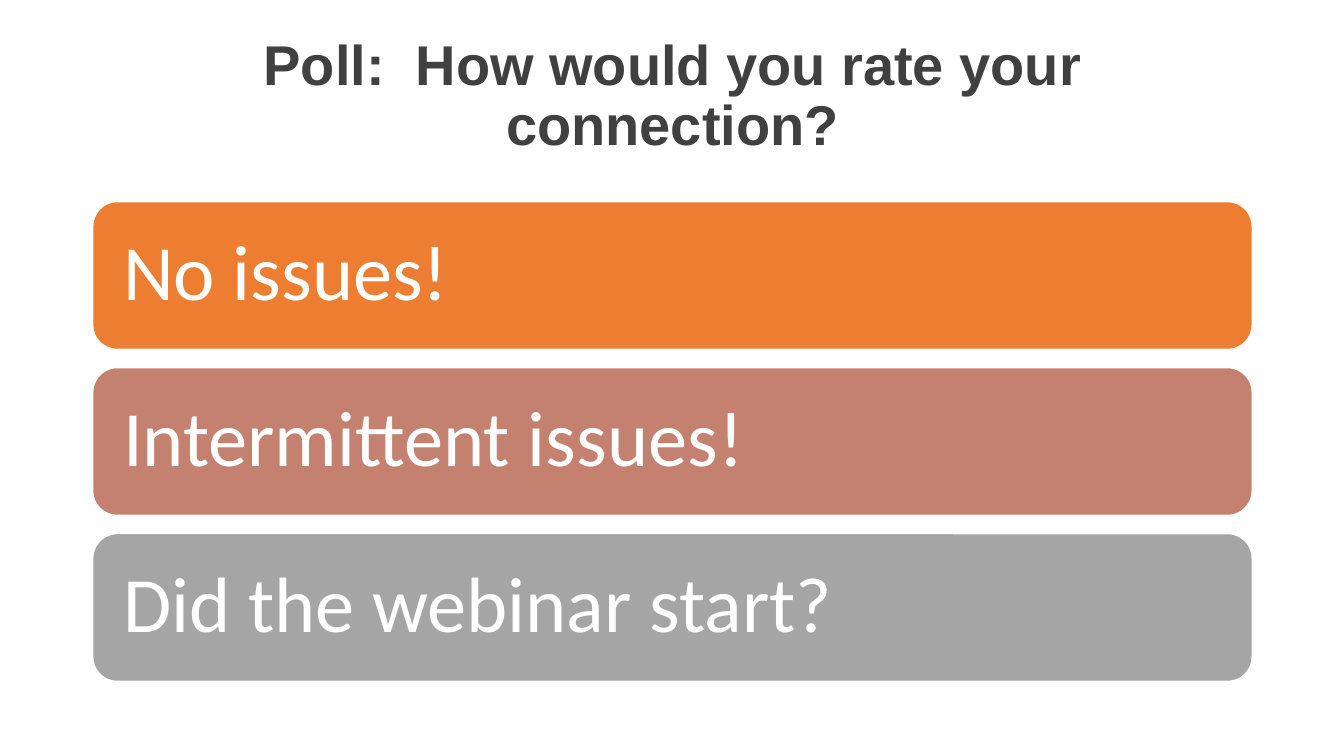
from pptx import Presentation
from pptx import util as u
from pptx.dml.color import RGBColor
from pptx.enum import shapes, text

SLIDE_WIDTH, SLIDE_HEIGHT = 13.33, 7.5
MARGIN = 0.92
CONTENT_WIDTH = 11.5
WHITE = "FFFFFF"
ANSWERS = [
    ("No issues!", "ED7D31"),
    ("Intermittent issues!", "C48170"),
    ("Did the webinar start?", "A5A5A5"),
]


def set_color(color_format, hex_color):
    color_format.rgb = RGBColor.from_string(hex_color)


def write_text(shape, wording, size, font_name, hex_color, align, bold=False):
    frame = shape.text_frame
    frame.word_wrap = True
    frame.vertical_anchor = text.MSO_ANCHOR.MIDDLE
    paragraph = frame.paragraphs[0]
    paragraph.alignment = align
    paragraph.line_spacing = 0.9
    run = paragraph.add_run()
    run.text = wording
    run.font.size = u.Pt(size)
    run.font.name = font_name
    run.font.bold = bold
    set_color(run.font.color, hex_color)


def add_title(slide, wording, left, top, width, height):
    box = slide.shapes.add_textbox(*map(u.Inches, (left, top, width, height)))
    write_text(box, wording, 40, "Arial", "404040", text.PP_ALIGN.CENTER, bold=True)


def add_answers(slide, answers, left, top, width, height, gap=0.18):
    """Stack one rounded bar per answer, filling the given box."""
    bar_height = (height - gap * (len(answers) - 1)) / len(answers)
    for row, (wording, fill) in enumerate(answers):
        bar_top = top + row * (bar_height + gap)
        bar = slide.shapes.add_shape(
            shapes.MSO_SHAPE.ROUNDED_RECTANGLE,
            *map(u.Inches, (left, bar_top, width, bar_height)))
        bar.shadow.inherit = False
        bar.fill.solid()
        set_color(bar.fill.fore_color, fill)
        set_color(bar.line.color, WHITE)
        bar.line.width = u.Pt(1)
        frame = bar.text_frame
        frame.margin_left = frame.margin_right = u.Inches(0.23)
        frame.margin_top = frame.margin_bottom = u.Inches(0.23)
        write_text(bar, wording, 56, "Calibri", WHITE, text.PP_ALIGN.LEFT)


def main():
    presentation = Presentation()
    presentation.slide_width = u.Inches(SLIDE_WIDTH)
    presentation.slide_height = u.Inches(SLIDE_HEIGHT)
    slide = presentation.slides.add_slide(presentation.slide_layouts[6])

    # Question
    add_title(slide, "Poll:  How would you rate your connection?",
              MARGIN, 0.24, CONTENT_WIDTH, 1.45)
    # Answer bars
    add_answers(slide, ANSWERS, MARGIN, 2, CONTENT_WIDTH, 4.76)

    presentation.save("out.pptx")


if __name__ == "__main__":
    main()
